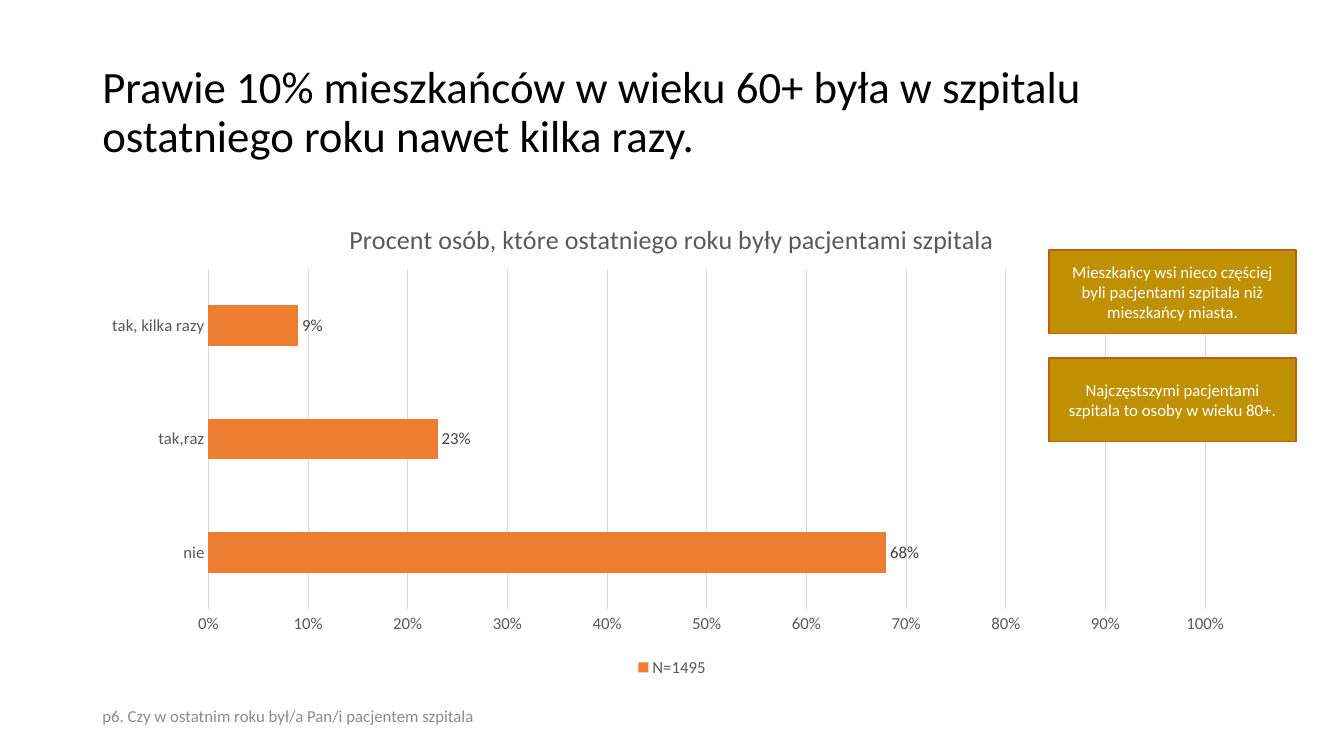
from dataclasses import dataclass

from lxml import etree
from pptx import Presentation
from pptx.chart import data as chart_data
from pptx.dml import color
from pptx.enum import chart as charts, shapes, text
from pptx.oxml import ns
from pptx.util import Cm, Pt


@dataclass(frozen=True)
class Theme:
    face: str = "Calibri"
    black: str = "000000"
    white: str = "FFFFFF"
    muted: str = "595959"
    value: str = "404040"
    question: str = "8C8C8C"
    grid: str = "D9D9D9"
    bar: str = "ED7D31"
    note: str = "BF9000"
    note_edge: str = "C55A11"
    headline_size: float = 32
    caption_size: float = 18.6
    body_size: float = 12


def rgb(value):
    return color.RGBColor.from_string(value)


class SurveySlide:
    def __init__(self, deck, theme):
        self.theme = theme
        self.slide = deck.slides.add_slide(deck.slide_layouts[6])

    def style(self, font, size, ink):
        font.name = self.theme.face
        font.size = Pt(size)
        font.bold = False
        font.color.rgb = rgb(ink)

    def set_wording(self, frame, wording, size, ink, align, spacing=1.0):
        frame.word_wrap = True
        frame.vertical_anchor = text.MSO_ANCHOR.MIDDLE
        line = frame.paragraphs[0]
        line.text = wording
        line.alignment = align
        line.line_spacing = spacing
        self.style(line.font, size, ink)

    def label(self, box, wording, size, ink, spacing=1.0):
        area = self.slide.shapes.add_textbox(*map(Cm, box))
        self.set_wording(area.text_frame, wording, size, ink, text.PP_ALIGN.LEFT, spacing)

    def note(self, box, wording):
        panel = self.slide.shapes.add_shape(shapes.MSO_SHAPE.RECTANGLE, *map(Cm, box))
        panel.shadow.inherit = False
        panel.fill.solid()
        panel.fill.fore_color.rgb = rgb(self.theme.note)
        panel.line.color.rgb = rgb(self.theme.note_edge)
        panel.line.width = Pt(1)
        self.set_wording(panel.text_frame, wording, self.theme.body_size,
                         self.theme.white, text.PP_ALIGN.CENTER)

    def place_plot(self, chart, **fractions):
        plot_area = chart.element.find(".//" + ns.qn("c:plotArea"))
        for old in plot_area.findall(ns.qn("c:layout")):
            plot_area.remove(old)
        layout = etree.Element(ns.qn("c:layout"))
        manual = etree.SubElement(layout, ns.qn("c:manualLayout"))
        settings = {"layoutTarget": "inner", "xMode": "edge", "yMode": "edge", **fractions}
        for tag, value in settings.items():
            etree.SubElement(manual, ns.qn("c:" + tag)).set("val", str(value))
        plot_area.insert(0, layout)

    def bars(self, box, caption, sample, shares):
        theme = self.theme
        answers = chart_data.CategoryChartData(number_format="0%")
        answers.categories = list(shares)
        answers.add_series(sample, list(shares.values()))
        chart = self.slide.shapes.add_chart(
            charts.XL_CHART_TYPE.BAR_CLUSTERED, *map(Cm, box), answers).chart
        self.style(chart.font, theme.body_size, theme.muted)

        chart.has_title = True
        heading = chart.chart_title.text_frame
        heading.text = caption
        self.style(heading.paragraphs[0].font, theme.caption_size, theme.muted)
        chart.chart_title.include_in_layout = False

        chart.has_legend = True
        chart.legend.position = charts.XL_LEGEND_POSITION.BOTTOM
        chart.legend.include_in_layout = False
        self.style(chart.legend.font, theme.body_size, theme.muted)

        for axis in (chart.category_axis, chart.value_axis):
            axis.major_tick_mark = axis.minor_tick_mark = charts.XL_TICK_MARK.NONE
            self.style(axis.tick_labels.font, theme.body_size, theme.muted)
        scale = chart.value_axis
        scale.minimum_scale, scale.maximum_scale, scale.major_unit = 0, 1, 0.1
        scale.tick_labels.number_format = "0%"
        scale.tick_labels.number_format_is_linked = False
        scale.format.line.fill.background()
        scale.has_major_gridlines = True
        for line in (scale.major_gridlines.format.line, chart.category_axis.format.line):
            line.color.rgb = rgb(theme.grid)
            line.width = Pt(0.75)

        plot = chart.plots[0]
        plot.gap_width = 182
        plot.vary_by_categories = False
        series = plot.series[0]
        series.format.fill.solid()
        series.format.fill.fore_color.rgb = rgb(theme.bar)
        values = series.data_labels
        values.show_value = True
        values.number_format = "0%"
        values.number_format_is_linked = False
        values.position = charts.XL_LABEL_POSITION.OUTSIDE_END
        self.style(values.font, theme.body_size, theme.value)
        self.place_plot(chart, x=0.1, y=0.14, w=0.86, h=0.71)


def main():
    deck = Presentation()
    deck.slide_width, deck.slide_height = Cm(33.87), Cm(19.05)
    theme = Theme()
    page = SurveySlide(deck, theme)
    left, width = 2.33, 29.21

    page.label((left, 1.02, width, 3.68),
               "Prawie 10% mieszkańców w wieku 60+ była w szpitalu ostatniego roku nawet kilka razy.",
               theme.headline_size, theme.black, spacing=0.9)
    page.bars((left, 5.08, width, 12.09),
              "Procent osób, które ostatniego roku były pacjentami szpitala",
              "N=1495", {"nie": 0.68, "tak,raz": 0.23, "tak, kilka razy": 0.09})
    page.label((left, 17.53, width, 1.02),
               "p6. Czy w ostatnim roku był/a Pan/i pacjentem szpitala",
               theme.body_size, theme.question)

    findings = (
        "Mieszkańcy wsi nieco częściej byli pacjentami szpitala niż mieszkańcy miasta.",
        "Najczęstszymi pacjentami szpitala to osoby w wieku 80+.",
    )
    for row, finding in enumerate(findings):
        page.note((26.44, 6.3 + 2.72 * row, 6.22, 2.11), finding)

    deck.save("out.pptx")


if __name__ == "__main__":
    main()
